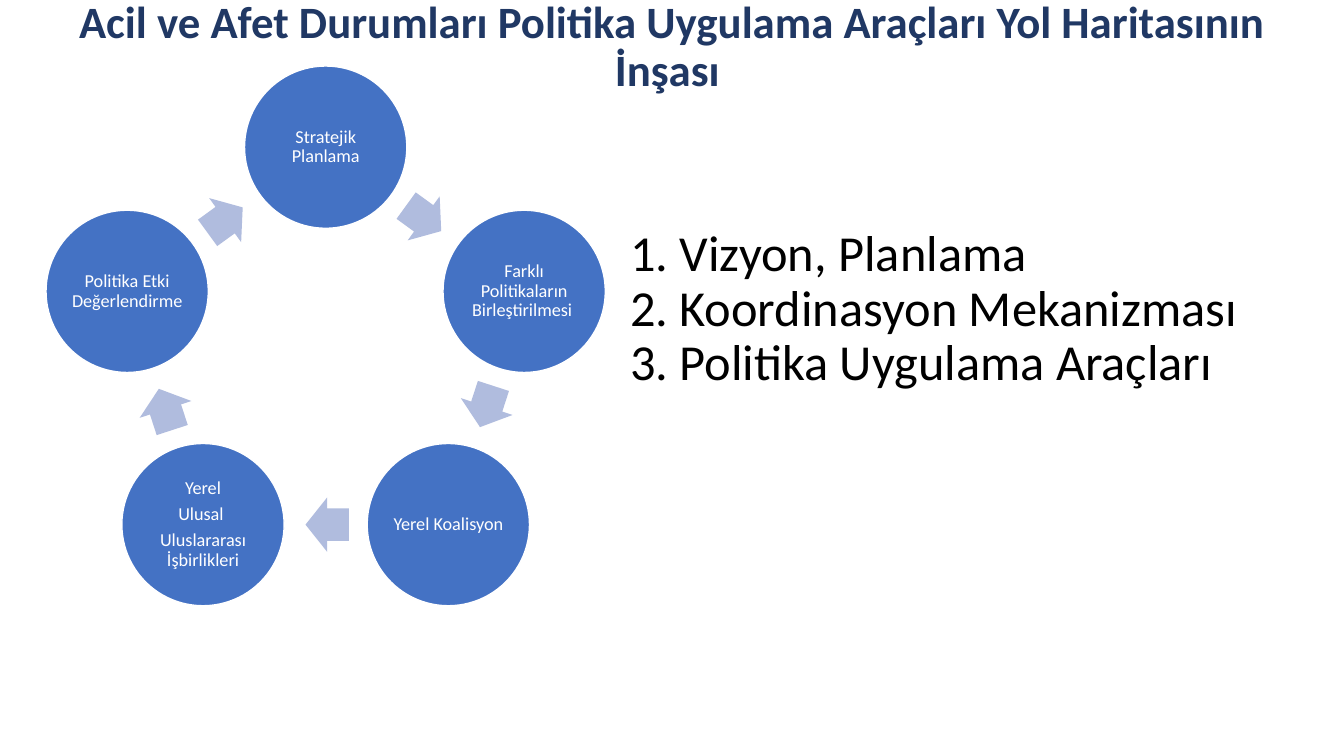
import math
from dataclasses import dataclass

from lxml import etree
from pptx import Presentation, util as u
from pptx.dml.color import RGBColor
from pptx.enum import shapes, text
from pptx.oxml.ns import qn

HEADING = "Acil ve Afet Durumları Politika Uygulama Araçları Yol Haritasının İnşası "
STEPS = ["Vizyon, Planlama", "Koordinasyon Mekanizması", "Politika Uygulama Araçları"]
CYCLE = [  # clockwise from the top, one list of paragraphs per circle
    ["Stratejik Planlama"],
    ["Farklı Politikaların Birleştirilmesi "],
    ["Yerel Koalisyon"],
    ["Yerel", "Ulusal ", "Uluslararası İşbirlikleri"],
    ["Politika Etki Değerlendirme"],
]

HEADING_BOX = (0.3, 0, 12.74, 0.95)
STEPS_BOX = (6.15, 0.4, 6.88, 5.35)
NUMBER_INDENT = 0.49
CENTER_X, CENTER_Y, RADIUS = 3.23, 3.53, 2.07
CIRCLE_SIZE = 1.61
ARROW_LENGTH, ARROW_HEIGHT = 0.43, 0.54
ARROW_SETBACK = 0.015


@dataclass(frozen=True)
class Theme:
    font: str = "Calibri"
    heading: str = "203864"
    body: str = "000000"
    circle: str = "4472C4"
    arrow: str = "B0BCDE"
    light: str = "FFFFFF"
    heading_size: int = 32
    body_size: int = 36
    circle_size: int = 13


THEME = Theme()


def write(shape, paragraphs, *, size, color, bold=False, align=text.PP_ALIGN.CENTER,
          space_after=0, inset=None, numbered=False):
    frame = shape.text_frame
    frame.word_wrap = True
    frame.auto_size = text.MSO_AUTO_SIZE.NONE
    frame.vertical_anchor = text.MSO_ANCHOR.MIDDLE
    if inset is not None:
        frame.margin_left = frame.margin_right = u.Inches(inset)
        frame.margin_top = frame.margin_bottom = u.Inches(inset)
    for index, line in enumerate(paragraphs):
        paragraph = frame.add_paragraph() if index else frame.paragraphs[0]
        paragraph.text = line
        if numbered:
            add_number(paragraph)
        paragraph.alignment = align
        paragraph.line_spacing = 0.9
        paragraph.space_before = u.Pt(0)
        paragraph.space_after = u.Pt(space_after)
        font = paragraph.runs[0].font
        font.name, font.size, font.bold = THEME.font, u.Pt(size), bold
        font.color.rgb = RGBColor.from_string(color)


def add_number(paragraph):
    properties = paragraph._p.get_or_add_pPr()
    properties.set("marL", str(u.Inches(NUMBER_INDENT)))
    properties.set("indent", str(-u.Inches(NUMBER_INDENT)))
    etree.SubElement(properties, qn("a:buFont"), typeface="+mj-lt")
    etree.SubElement(properties, qn("a:buAutoNum"), type="arabicPeriod")


def place(shape, box):
    shape.left, shape.top, shape.width, shape.height = map(u.Inches, box)


def add_centered(group, kind, center, width, height, fill):
    x, y = center
    box = (x - width / 2, y - height / 2, width, height)
    shape = group.shapes.add_shape(kind, *map(u.Inches, box))
    shape.shadow.inherit = False
    shape.fill.solid()
    shape.fill.fore_color.rgb = RGBColor.from_string(fill)
    return shape


def ring_point(position, radius):
    """Point on the ring, counted in circles clockwise from the top."""
    angle = math.tau * position / len(CYCLE)
    return CENTER_X + radius * math.sin(angle), CENTER_Y - radius * math.cos(angle)


def add_circle(group, position, paragraphs):
    circle = add_centered(group, shapes.MSO_SHAPE.OVAL, ring_point(position, RADIUS),
                          CIRCLE_SIZE, CIRCLE_SIZE, THEME.circle)
    circle.line.color.rgb = RGBColor.from_string(THEME.light)
    circle.line.width = u.Pt(1)
    write(circle, paragraphs, size=THEME.circle_size, color=THEME.light,
          space_after=4.5, inset=0.02)


def add_arrow(group, position):
    """Arrow halfway from one circle to the next, set back a little."""
    step = 360 / len(CYCLE)
    rotation = step * (position + 0.5)
    heading = math.radians(rotation)
    x, y = ring_point(position + 0.5, RADIUS * math.cos(math.radians(step / 2)))
    center = (x - ARROW_SETBACK * math.cos(heading), y - ARROW_SETBACK * math.sin(heading))
    arrow = add_centered(group, shapes.MSO_SHAPE.RIGHT_ARROW, center,
                         ARROW_LENGTH, ARROW_HEIGHT, THEME.arrow)
    arrow.adjustments[0], arrow.adjustments[1] = 0.6, 0.5
    arrow.rotation = rotation
    arrow.line.fill.background()


def main():
    presentation = Presentation()
    presentation.slide_width, presentation.slide_height = u.Inches(13.33), u.Inches(7.5)
    slide = presentation.slides.add_slide(presentation.slide_layouts[1])

    title, steps = slide.placeholders
    place(title, HEADING_BOX)
    write(title, [HEADING], size=THEME.heading_size, color=THEME.heading, bold=True)
    place(steps, STEPS_BOX)
    write(steps, STEPS, size=THEME.body_size, color=THEME.body,
          align=text.PP_ALIGN.LEFT, numbered=True)

    cycle = slide.shapes.add_group_shape()
    for position, paragraphs in enumerate(CYCLE):
        add_circle(cycle, position, paragraphs)
        add_arrow(cycle, position)

    presentation.save("out.pptx")


if __name__ == "__main__":
    main()
